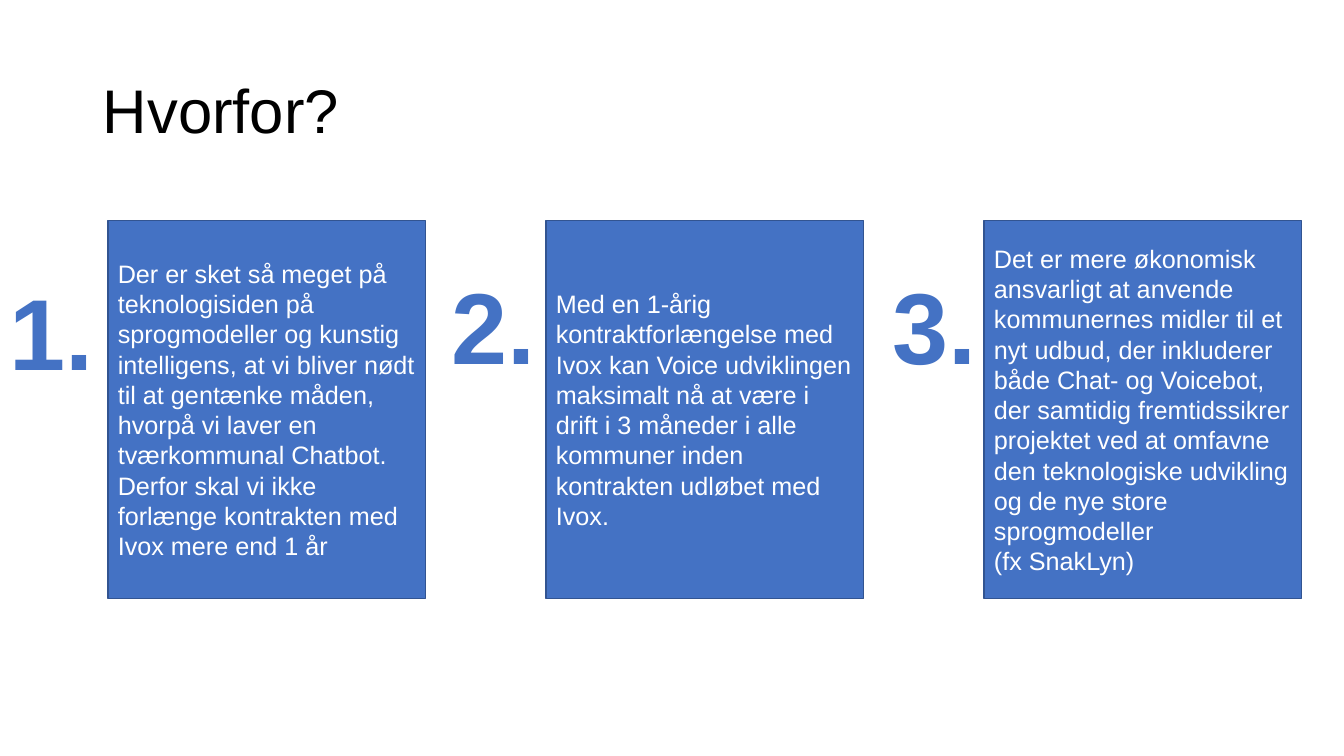
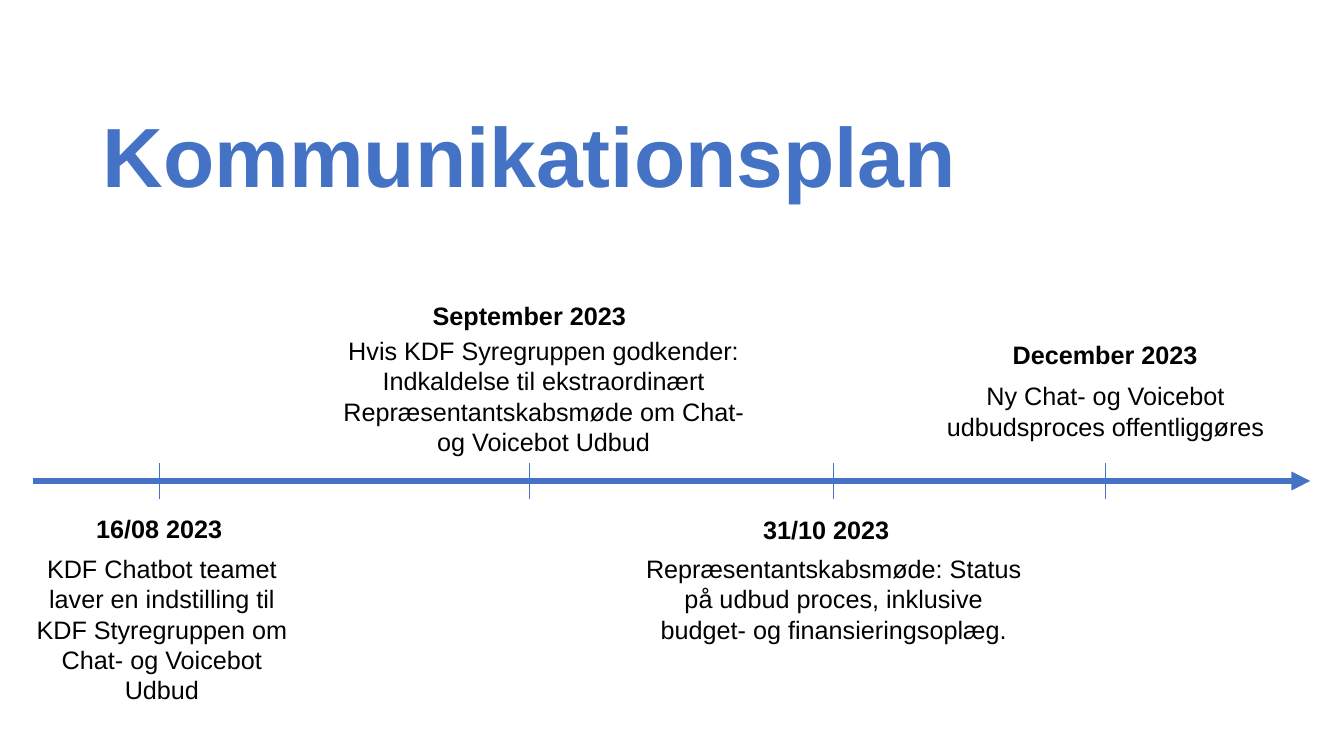
from dataclasses import dataclass

from lxml.etree import SubElement
from pptx import Presentation
from pptx.dml.color import RGBColor
from pptx.enum.shapes import MSO_CONNECTOR, MSO_SHAPE
from pptx.enum.text import MSO_ANCHOR, MSO_AUTO_SIZE, PP_ALIGN
from pptx.oxml.ns import qn
from pptx.util import Cm, Pt


@dataclass(frozen=True)
class Theme:
    font: str = "Arial"
    accent: RGBColor = RGBColor(0x44, 0x72, 0xC4)
    border: RGBColor = RGBColor(0x32, 0x54, 0x91)
    dark: RGBColor = RGBColor(0, 0, 0)
    light: RGBColor = RGBColor(255, 255, 255)
    body_size: int = 18
    title_size: int = 44
    headline_size: int = 60
    number_size: int = 72


THEME = Theme()

REASONS = [
    {"number": "1.", "number_top": 6.66, "paragraphs": [
        "Der er sket så meget på teknologisiden på sprogmodeller og kunstig "
        "intelligens, at vi bliver nødt til at gentænke måden, hvorpå vi laver en "
        "tværkommunal Chatbot. Derfor skal vi ikke forlænge kontrakten med Ivox "
        "mere end 1 år"]},
    {"number": "2.", "number_top": 6.53, "paragraphs": [
        "Med en 1-årig kontraktforlængelse med Ivox kan Voice udviklingen maksimalt "
        "nå at være i drift i 3 måneder i alle kommuner inden kontrakten udløbet "
        "med Ivox."]},
    {"number": "3.", "number_top": 6.53, "paragraphs": [
        "Det er mere økonomisk ansvarligt at anvende kommunernes midler til et nyt "
        "udbud, der inkluderer både Chat- og Voicebot, der samtidig fremtidssikrer "
        "projektet ved at omfavne den teknologiske udvikling og de nye store "
        "sprogmodeller",
        "(fx SnakLyn)"]},
]

MILESTONES = [
    {"tick": 4.01, "date": "16/08 2023", "date_center": 4.01, "date_top": 12.8,
     "detail": "KDF Chatbot teamet laver en indstilling til KDF Styregruppen om "
               "Chat- og Voicebot Udbud",
     "detail_box": (0.46, 13.82, 7.24, 4.11)},
    {"tick": 13.34, "date": "September 2023", "date_center": 13.34, "date_top": 7.44,
     "detail": "Hvis KDF Syregruppen godkender: Indkaldelse til ekstraordinært "
               "Repræsentantskabsmøde om Chat- og Voicebot Udbud",
     "detail_box": (8.38, 8.33, 10.64, 3.33)},
    {"tick": 21.01, "date": "31/10 2023", "date_center": 20.82, "date_top": 12.83,
     "detail": "Repræsentantskabsmøde: Status på udbud proces, inklusive budget- og "
               "finansieringsoplæg.",
     "detail_box": (15.93, 13.82, 10.16, 2.57)},
    {"tick": 27.85, "date": "December 2023", "date_center": 27.85, "date_top": 8.42,
     "detail": "Ny Chat- og Voicebot udbudsproces offentliggøres",
     "detail_box": (22.78, 9.47, 10.16, 1.8)},
]

CARD_LEFT, CARD_TOP, CARD_WIDTH, CARD_HEIGHT = 2.72, 5.56, 8, 9.52
CARD_STEP, NUMBER_STEP = 11.04, 11.12
DATE_WIDTH = 5.61
AXIS_LEFT, AXIS_RIGHT, AXIS_Y, TICK_HALF = 0.84, 33.02, 12.12, 0.46


def write(shape, paragraphs, size=THEME.body_size, color=THEME.dark, bold=False,
          align=PP_ALIGN.LEFT, anchor=MSO_ANCHOR.TOP):
    frame = shape.text_frame
    frame.word_wrap = True
    frame.auto_size = MSO_AUTO_SIZE.NONE
    frame.vertical_anchor = anchor
    for index, text in enumerate(paragraphs):
        paragraph = frame.add_paragraph() if index else frame.paragraphs[0]
        paragraph.alignment = align
        run = paragraph.add_run()
        run.text = text
        run.font.name = THEME.font
        run.font.size = Pt(size)
        run.font.bold = bold
        run.font.color.rgb = color


def add_text(slide, box, text, **style):
    shape = slide.shapes.add_textbox(*map(Cm, box))
    write(shape, [text], **style)


def add_titled_slide(presentation, title, box, **style):
    slide = presentation.slides.add_slide(presentation.slide_layouts[5])
    shape = slide.shapes.title
    shape.left, shape.top, shape.width, shape.height = map(Cm, box)
    write(shape, [title], **style)
    return slide


def add_line(slide, start, end, width, arrow=False):
    connector = slide.shapes.add_connector(
        MSO_CONNECTOR.STRAIGHT, *map(Cm, (*start, *end)))
    connector.line.color.rgb = THEME.accent
    connector.line.width = Pt(width)
    if arrow:
        line = connector.line._get_or_add_ln()
        SubElement(line, qn("a:tailEnd"), type="triangle")
    SubElement(connector._element.spPr, qn("a:effectLst"))


def add_card(slide, left, paragraphs):
    card = slide.shapes.add_shape(
        MSO_SHAPE.RECTANGLE, *map(Cm, (left, CARD_TOP, CARD_WIDTH, CARD_HEIGHT)))
    card.shadow.inherit = False
    card.fill.solid()
    card.fill.fore_color.rgb = THEME.accent
    card.line.color.rgb = THEME.border
    card.line.width = Pt(1)
    write(card, paragraphs, color=THEME.light, anchor=MSO_ANCHOR.MIDDLE)


def build_reasons(presentation):
    slide = add_titled_slide(presentation, "Hvorfor?", (2.34, 1.02, 29.21, 3.68),
                             size=THEME.title_size, anchor=MSO_ANCHOR.MIDDLE)
    slide.shapes.title.text_frame.paragraphs[0].line_spacing = 0.9
    for index, reason in enumerate(REASONS):
        add_text(slide, (index * NUMBER_STEP, reason["number_top"], 3.15, 3.18),
                 reason["number"], size=THEME.number_size, color=THEME.accent, bold=True)
        add_card(slide, CARD_LEFT + index * CARD_STEP, reason["paragraphs"])


def build_timeline(presentation):
    slide = add_titled_slide(presentation, "Kommunikationsplan", (2.33, 2.48, 22.35, 2.82),
                             size=THEME.headline_size, color=THEME.accent, bold=True)
    add_line(slide, (AXIS_LEFT, AXIS_Y), (AXIS_RIGHT, AXIS_Y), 4.5, arrow=True)
    for milestone in MILESTONES:
        tick = milestone["tick"]
        add_line(slide, (tick, AXIS_Y + TICK_HALF), (tick, AXIS_Y - TICK_HALF), 0.5)
        date_left = milestone["date_center"] - DATE_WIDTH / 2
        add_text(slide, (date_left, milestone["date_top"], DATE_WIDTH, 1.02),
                 milestone["date"], bold=True, align=PP_ALIGN.CENTER)
        add_text(slide, milestone["detail_box"], milestone["detail"],
                 align=PP_ALIGN.CENTER)


def main():
    presentation = Presentation()
    presentation.slide_width, presentation.slide_height = Cm(33.87), Cm(19.05)
    build_reasons(presentation)
    build_timeline(presentation)
    presentation.save("out.pptx")


if __name__ == "__main__":
    main()
